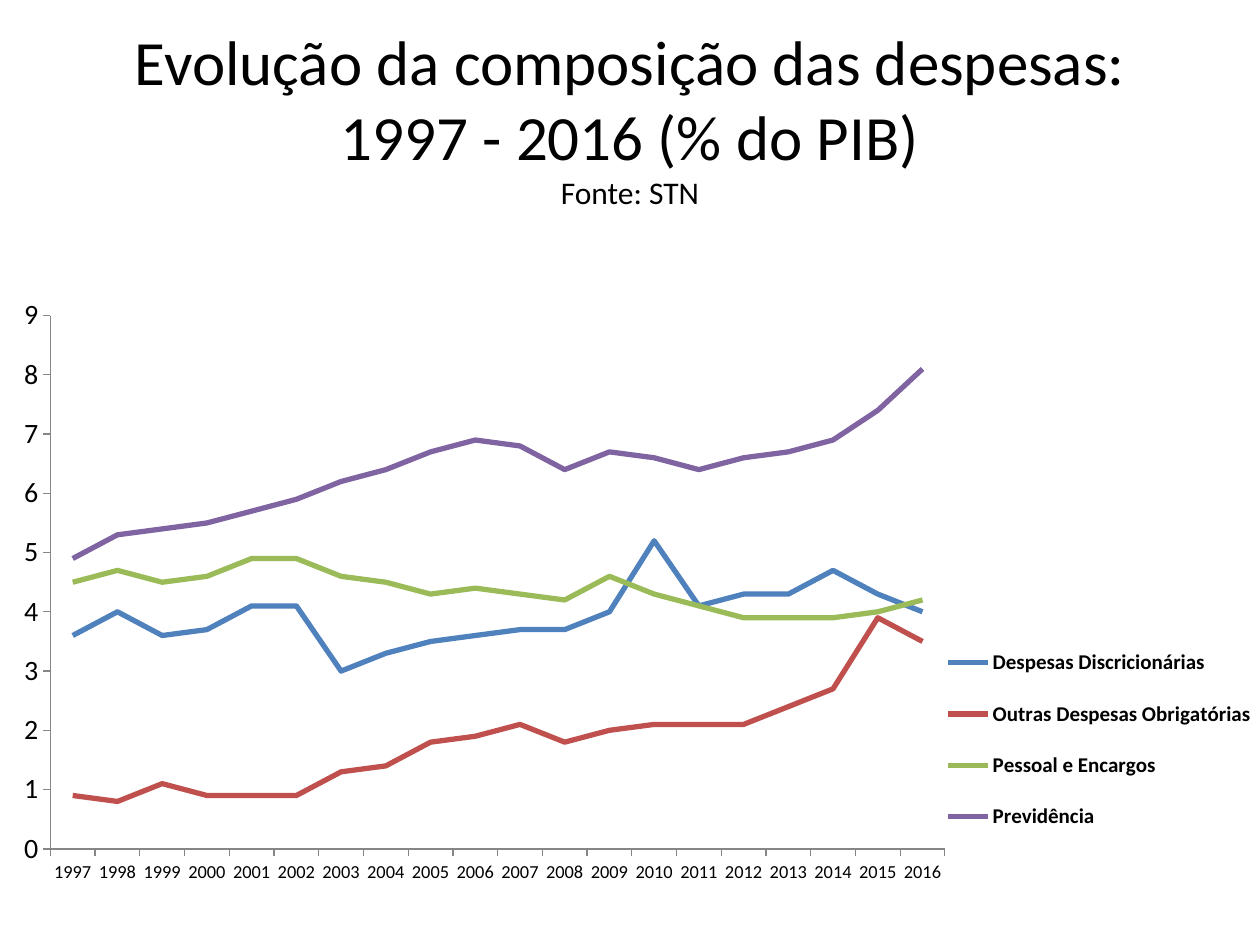
from pptx import Presentation
from pptx.chart.data import CategoryChartData
from pptx.dml.color import RGBColor
from pptx.enum.chart import XL_CHART_TYPE, XL_LEGEND_POSITION, XL_TICK_MARK
from pptx.enum.text import MSO_ANCHOR, PP_ALIGN
from pptx.oxml import parse_xml
from pptx.oxml.ns import nsdecls, qn
from pptx.util import Inches, Pt

FONT = "Calibri"
COLORS = {
    "text": "000000",
    "axis": "868686",
    "Despesas Discricionárias": "4F81BD",
    "Outras Despesas Obrigatórias": "C0504D",
    "Pessoal e Encargos": "9BBB59",
    "Previdência": "8064A2",
}
YEARS = [str(year) for year in range(1997, 2017)]
EXPENSES = {
    "Despesas Discricionárias": [
        3.6, 4, 3.6, 3.7, 4.1, 4.1, 3, 3.3, 3.5, 3.6,
        3.7, 3.7, 4, 5.2, 4.1, 4.3, 4.3, 4.7, 4.3, 4],
    "Outras Despesas Obrigatórias": [
        0.9, 0.8, 1.1, 0.9, 0.9, 0.9, 1.3, 1.4, 1.8, 1.9,
        2.1, 1.8, 2, 2.1, 2.1, 2.1, 2.4, 2.7, 3.9, 3.5],
    "Pessoal e Encargos": [
        4.5, 4.7, 4.5, 4.6, 4.9, 4.9, 4.6, 4.5, 4.3, 4.4,
        4.3, 4.2, 4.6, 4.3, 4.1, 3.9, 3.9, 3.9, 4, 4.2],
    "Previdência": [
        4.9, 5.3, 5.4, 5.5, 5.7, 5.9, 6.2, 6.4, 6.7, 6.9,
        6.8, 6.4, 6.7, 6.6, 6.4, 6.6, 6.7, 6.9, 7.4, 8.1],
}


def rgb(name):
    return RGBColor.from_string(COLORS[name])


def style_font(font, size, bold=False, color="text"):
    font.name = FONT
    font.size = Pt(size)
    font.bold = bold
    font.color.rgb = rgb(color)


def add_text(paragraph, text, **style):
    run = paragraph.add_run()
    run.text = text
    style_font(run.font, **style)


def set_layout(part, index, shares, inner=False):
    for old in part.findall(qn("c:layout")):
        part.remove(old)
    target = '<c:layoutTarget val="inner"/>' if inner else ""
    modes = "".join(f'<c:{side}Mode val="edge"/>' for side in "xy")
    sizes = "".join(f'<c:{side} val="{share}"/>' for side, share in zip("xywh", shares))
    part.insert(index, parse_xml(
        f'<c:layout {nsdecls("c")}><c:manualLayout>{target}{modes}{sizes}'
        "</c:manualLayout></c:layout>"))


def add_heading(slide, box):
    frame = slide.shapes.add_textbox(*box).text_frame
    frame.word_wrap = True
    frame.vertical_anchor = MSO_ANCHOR.MIDDLE
    heading = frame.paragraphs[0]
    heading.alignment = PP_ALIGN.CENTER
    add_text(heading, "Evolução da composição das despesas: 1997 - 2016 (% do PIB)", size=36)
    heading.add_line_break()
    add_text(heading, "Fonte: STN", size=18)


def style_axis(axis, size):
    axis.has_major_gridlines = False
    axis.major_tick_mark = XL_TICK_MARK.OUTSIDE
    axis.minor_tick_mark = XL_TICK_MARK.NONE
    axis.format.line.color.rgb = rgb("axis")
    axis.format.line.width = Pt(0.75)
    style_font(axis.tick_labels.font, size)


def add_expense_chart(slide, box):
    expenses = CategoryChartData()
    expenses.categories = YEARS
    for name, shares in EXPENSES.items():
        expenses.add_series(name, shares)
    chart = slide.shapes.add_chart(XL_CHART_TYPE.LINE, *box, expenses).chart
    chart.has_title = False
    style_font(chart.font, 10)
    chart.plots[0].vary_by_categories = False
    for series in chart.plots[0].series:
        series.smooth = False
        series.format.line.color.rgb = rgb(series.name)
        series.format.line.width = Pt(3)

    style_axis(chart.category_axis, 10.5)
    style_axis(chart.value_axis, 16)
    chart.value_axis.minimum_scale = 0
    chart.value_axis.maximum_scale = 9
    chart.value_axis.major_unit = 1
    chart.value_axis.tick_labels.number_format = "General"
    chart.value_axis.tick_labels.number_format_is_linked = False

    chart.has_legend = True
    chart.legend.position = XL_LEGEND_POSITION.RIGHT
    chart.legend.include_in_layout = False
    style_font(chart.legend.font, 12, bold=True)
    chart_root = chart.element.find(qn("c:chart"))
    set_layout(chart_root.find(qn("c:plotArea")), 0, (0.04, 0.05, 0.71, 0.83), inner=True)
    set_layout(chart_root.find(qn("c:legend")), 1, (0.75, 0.53, 0.25, 0.36))


def main():
    deck = Presentation()
    deck.slide_width, deck.slide_height = Inches(10), Inches(7.5)
    width, height = deck.slide_width, deck.slide_height
    slide = deck.slides.add_slide(deck.slide_layouts[6])
    column, row = width // 20, height // 25
    add_heading(slide, (column, row, 18 * column, height // 6))
    add_expense_chart(slide, (0, int(height * 0.3), width, int(height * 0.68)))
    deck.save("out.pptx")


if __name__ == "__main__":
    main()
